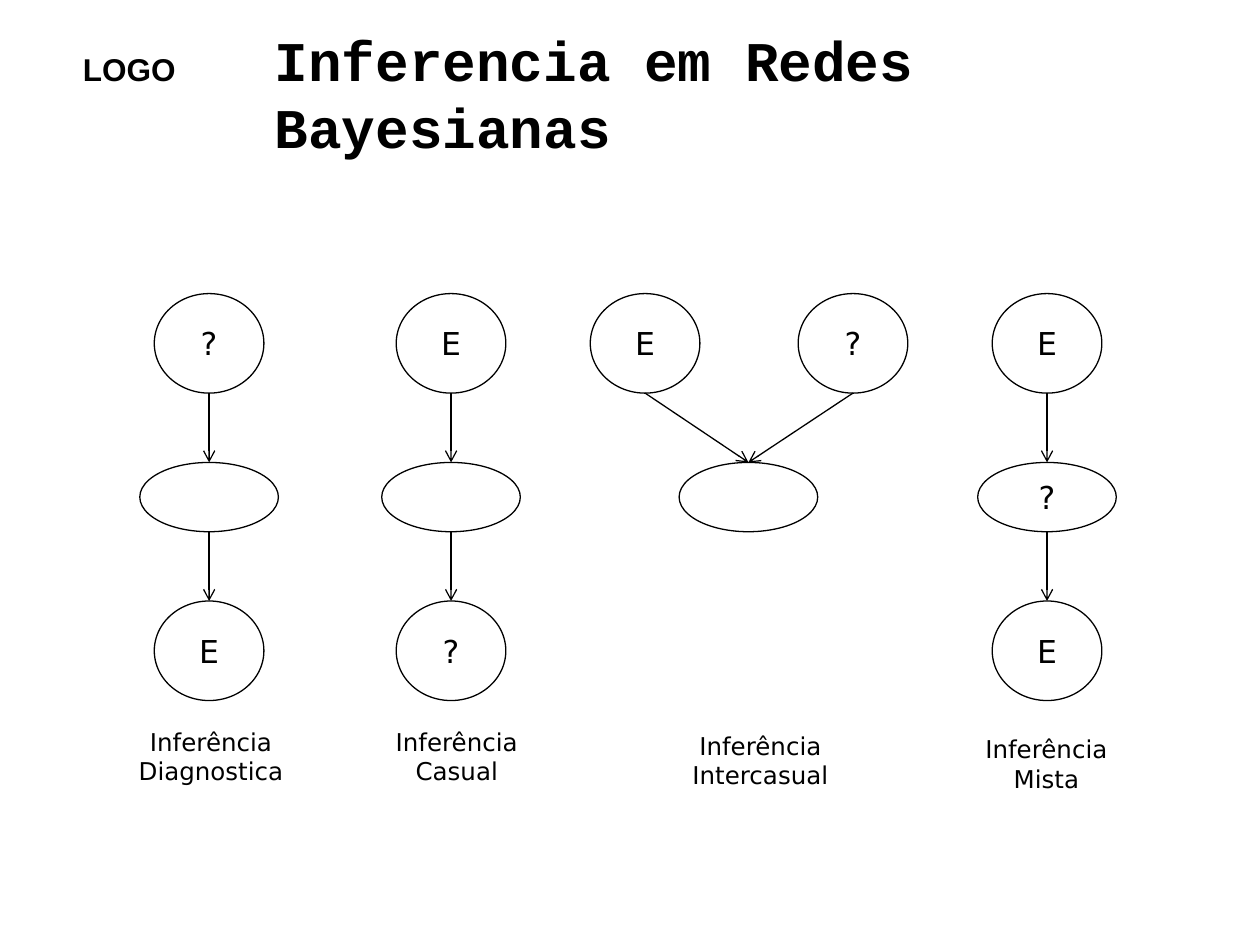
from lxml import etree
from pptx import Presentation
from pptx.dml.color import RGBColor
from pptx.enum.shapes import MSO_CONNECTOR as Connector, MSO_SHAPE as Shape
from pptx.enum.text import MSO_ANCHOR as Anchor, MSO_AUTO_SIZE as AutoSize, PP_ALIGN as Align
from pptx.oxml.ns import qn
from pptx.util import Inches, Pt


def color(hex_value):
    return RGBColor.from_string(hex_value)


class NetworkSlide:
    INK = "000000"
    BODY_FONT = "DejaVu Sans"
    LINE_WIDTH = 0.75

    def __init__(self, presentation):
        self.slide = presentation.slides.add_slide(presentation.slide_layouts[5])

    def add_run(self, frame, text, size, font=BODY_FONT, bold=False, align=Align.CENTER):
        paragraph = frame.paragraphs[0]
        paragraph.alignment = align
        run = paragraph.add_run()
        run.text = text
        run.font.name = font
        run.font.size = Pt(size)
        run.font.bold = bold
        run.font.color.rgb = color(self.INK)

    def title(self, text, left, top, width, height):
        shape = self.slide.shapes.title
        shape.left, shape.top = Inches(left), Inches(top)
        shape.width, shape.height = Inches(width), Inches(height)
        frame = shape.text_frame
        frame.word_wrap = True
        frame.auto_size = AutoSize.NONE
        frame.vertical_anchor = Anchor.MIDDLE
        self.add_run(frame, text, 32, "Courier New", True, Align.LEFT)

    def text(self, text, left, top, width, height, size, wrap=True, **style):
        shape = self.slide.shapes.add_textbox(
            Inches(left), Inches(top), Inches(width), Inches(height))
        shape.text_frame.word_wrap = wrap
        self.add_run(shape.text_frame, text, size, **style)

    def node(self, center, top, width, height, text=""):
        shape = self.slide.shapes.add_shape(
            Shape.OVAL, Inches(center - width / 2), Inches(top),
            Inches(width), Inches(height))
        shape.shadow.inherit = False
        shape.fill.background()
        shape.line.color.rgb = color(self.INK)
        shape.line.width = Pt(self.LINE_WIDTH)
        if text:
            frame = shape.text_frame
            frame.margin_left = frame.margin_right = 0
            frame.margin_top = frame.margin_bottom = 0
            frame.vertical_anchor = Anchor.MIDDLE
            self.add_run(frame, text, 18)
        return shape

    def circle(self, center, top, text):
        return self.node(center, top, 0.87, 0.79, text)

    def oval(self, center, top, text=""):
        return self.node(center, top, 1.1, 0.55, text)

    def arrow(self, parent, child):
        """Runs from the bottom of the parent to the top of the child."""
        connector = self.slide.shapes.add_connector(
            Connector.STRAIGHT,
            parent.left + parent.width // 2, parent.top + parent.height,
            child.left + child.width // 2, child.top)
        connector.line.color.rgb = color(self.INK)
        connector.line.width = Pt(self.LINE_WIDTH)
        properties = connector._element.spPr
        line = properties.find(qn("a:ln"))
        etree.SubElement(line, qn("a:tailEnd"), type="arrow")
        etree.SubElement(properties, qn("a:effectLst"))


TOP_ROW, MIDDLE_ROW, BOTTOM_ROW = 2.33, 3.67, 4.77

# Center, then the marks of the top, middle and bottom nodes
CHAINS = [
    (1.66, "?", "", "E"),
    (3.58, "E", "", "?"),
    (8.31, "E", "?", "E"),
]

# Caption, left, top
CAPTIONS = [
    ("Inferência Diagnostica", 0.85, 5.72),
    ("Inferência Casual", 2.8, 5.72),
    ("Inferência Intercasual", 5.21, 5.75),
    ("Inferência Mista", 7.48, 5.78),
]


def main():
    presentation = Presentation()
    presentation.slide_width = Inches(10)
    presentation.slide_height = Inches(7.5)
    page = NetworkSlide(presentation)

    # Header
    page.text("LOGO", 0.56, 0.35, 0.94, 0.4, 18, wrap=False,
              font="Arial", bold=True, align=Align.LEFT)
    page.title("Inferencia em Redes Bayesianas", 2.08, 0.25, 7.42, 0.97)

    # Straight chains: diagnostic, causal and mixed
    for center, first, second, third in CHAINS:
        top = page.circle(center, TOP_ROW, first)
        middle = page.oval(center, MIDDLE_ROW, second)
        bottom = page.circle(center, BOTTOM_ROW, third)
        page.arrow(top, middle)
        page.arrow(middle, bottom)

    # Intercausal: two parents share one child
    child = page.oval(5.94, MIDDLE_ROW)
    for center, mark in ((5.12, "E"), (6.77, "?")):
        page.arrow(page.circle(center, TOP_ROW, mark), child)

    # Captions
    for caption, left, top in CAPTIONS:
        page.text(caption, left, top, 1.65, 0.57, 14)

    presentation.save("out.pptx")


if __name__ == "__main__":
    main()
